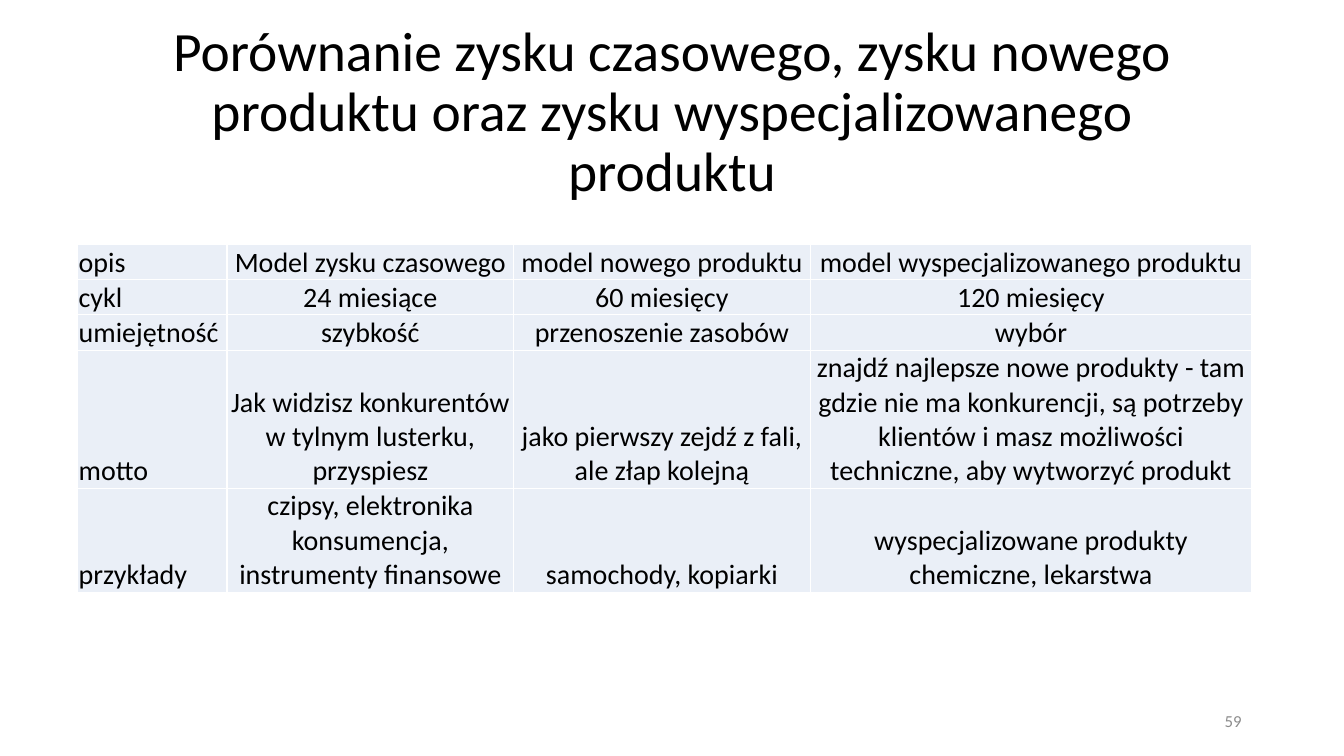
import pptx
import pptx.util
import pptx.dml.color
import pptx.enum.text
import pptx.oxml
import pptx.oxml.ns

Pt = pptx.util.Pt
Color = pptx.dml.color.RGBColor.from_string
Align = pptx.enum.text.PP_ALIGN
Anchor = pptx.enum.text.MSO_ANCHOR

THEME = {
    "font": "Calibri",
    "title": {"size": 39.6, "color": "000000"},
    "cell": {"size": 20, "color": "000000"},
    "number": {"size": 12, "color": "8C8C8C"},
    "fill": "EAEFF7",
    "border": "FFFFFF",
}
LINE_HEIGHT = 24.5
COLUMN_WIDTHS = [106.7, 204.7, 211.9, 315.3]
ROWS = [
    (1, ["opis", "Model zysku czasowego", "model nowego produktu",
         "model wyspecjalizowanego produktu"]),
    (1, ["cykl", "24 miesiące", "60 miesięcy", "120 miesięcy"]),
    (1, ["umiejętność", "szybkość", "przenoszenie zasobów", "wybór"]),
    (4, ["motto", "Jak widzisz konkurentów w tylnym lusterku, przyspiesz",
         "jako pierwszy zejdź z fali, ale złap kolejną",
         "znajdź najlepsze nowe produkty - tam gdzie nie ma konkurencji, są potrzeby "
         "klientów i masz możliwości techniczne, aby wytworzyć produkt"]),
    (3, ["przykłady", "czipsy, elektronika konsumencja, instrumenty finansowe",
         "samochody, kopiarki", "wyspecjalizowane produkty chemiczne, lekarstwa"]),
]


def write(frame, text, style, alignment):
    para = frame.paragraphs[0]
    para.alignment = alignment
    span = para.add_run()
    span.text = text
    span.font.name = THEME["font"]
    span.font.size = Pt(THEME[style]["size"])
    span.font.color.rgb = Color(THEME[style]["color"])
    return para


def add_borders(cell):
    properties = cell._tc.get_or_add_tcPr()
    for position, side in enumerate(["lnL", "lnR", "lnT", "lnB"]):
        properties.insert(position, pptx.oxml.parse_xml(
            f'<a:{side} {pptx.oxml.ns.nsdecls("a")} w="{Pt(1)}"><a:solidFill>'
            f'<a:srgbClr val="{THEME["border"]}"/></a:solidFill></a:{side}>'))


deck = pptx.Presentation()
deck.slide_width, deck.slide_height = Pt(960), Pt(540)
page = deck.slides.add_slide(deck.slide_layouts[5])

title = page.shapes.title
title_box = {"left": 66, "top": 28.75, "width": 828, "height": 104.4}
for name, value in title_box.items():
    setattr(title, name, Pt(value))
title.text_frame.word_wrap = True
title.text_frame.auto_size = pptx.enum.text.MSO_AUTO_SIZE.NONE
title.text_frame.vertical_anchor = Anchor.MIDDLE
heading = write(
    title.text_frame,
    "Porównanie zysku czasowego, zysku nowego produktu oraz zysku wyspecjalizowanego produktu",
    "title", Align.CENTER)
heading.line_spacing = 0.9

table_height = LINE_HEIGHT * sum(lines for lines, texts in ROWS)
table = page.shapes.add_table(
    len(ROWS), len(COLUMN_WIDTHS), Pt(55.5), Pt(174.5),
    Pt(sum(COLUMN_WIDTHS)), Pt(table_height)).table
table.first_row = False
table.horz_banding = False
for column, width in zip(table.columns, COLUMN_WIDTHS):
    column.width = Pt(width)

cell_format = {
    "margin_left": Pt(0.7), "margin_right": Pt(0.7), "margin_top": Pt(0.7),
    "margin_bottom": Pt(0), "vertical_anchor": Anchor.BOTTOM,
}
for row, (lines, texts) in zip(table.rows, ROWS):
    row.height = Pt(LINE_HEIGHT * lines)
    for index, (cell, text) in enumerate(zip(row.cells, texts)):
        for name, value in cell_format.items():
            setattr(cell, name, value)
        cell.fill.solid()
        cell.fill.fore_color.rgb = Color(THEME["fill"])
        add_borders(cell)
        write(cell.text_frame, text, "cell", Align.CENTER if index else Align.LEFT)

number = page.shapes.add_textbox(Pt(678), Pt(500.5), Pt(216), Pt(28.75))
number.text_frame.word_wrap = True
number.text_frame.vertical_anchor = Anchor.MIDDLE
write(number.text_frame, "59", "number", Align.RIGHT)

deck.save("out.pptx")
